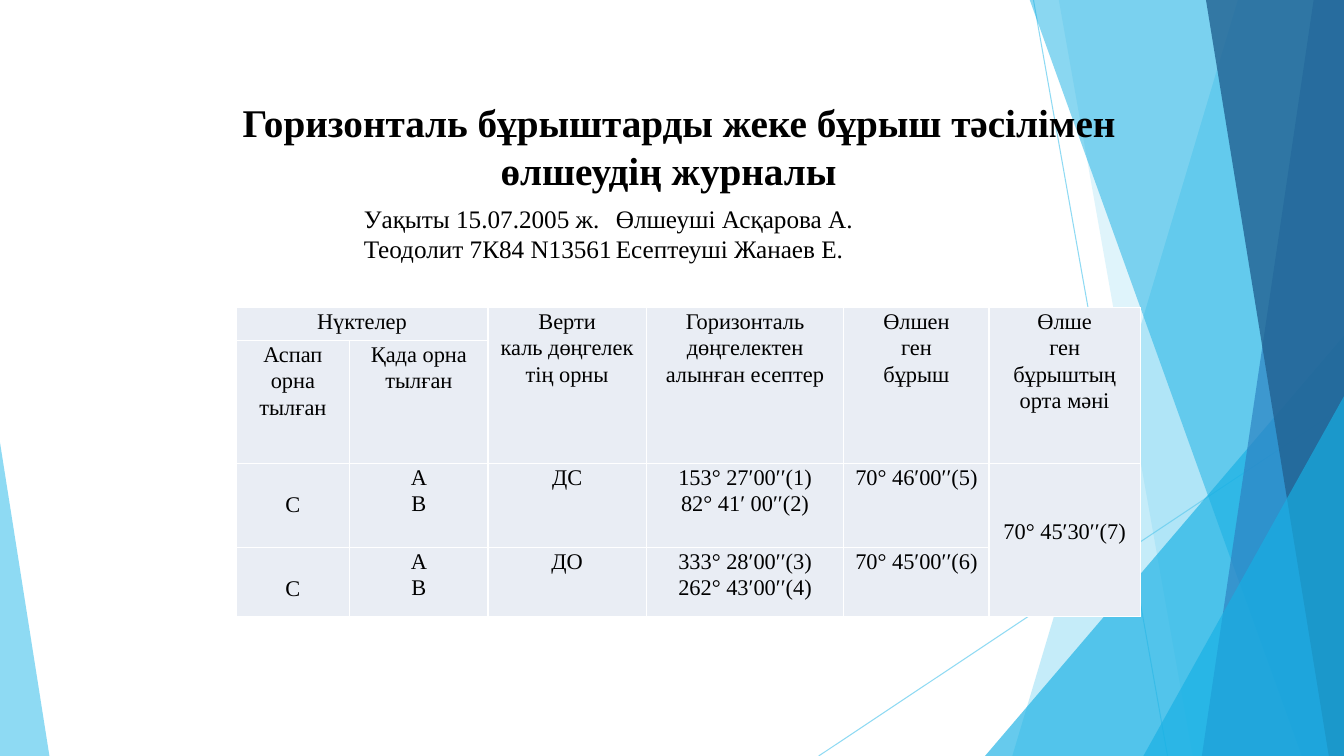
from lxml.etree import SubElement
from pptx import Presentation
from pptx.dml.color import RGBColor
from pptx.enum.shapes import MSO_CONNECTOR, MSO_SHAPE
from pptx.enum.text import MSO_ANCHOR, MSO_AUTO_SIZE, PP_ALIGN
from pptx.oxml.ns import qn
from pptx.util import Pt

PX = 9144


def paint(color_format, color, alpha=100):
    color_format.rgb = RGBColor.from_string(color)
    if alpha < 100:
        tint = color_format._xFill.find(qn("a:srgbClr"))
        SubElement(tint, qn("a:alpha"), val=str(alpha * 1000))


def style(paragraph, size, bold=False):
    for run in paragraph.runs:
        run.font.name = "Times New Roman"
        run.font.size = Pt(size)
        run.font.bold = bold
        paint(run.font.color, "000000")


prs = Presentation()
prs.slide_width = 1333 * PX
prs.slide_height = 750 * PX
slide = prs.slides.add_slide(prs.slide_layouts[5])
shapes = slide.shapes

for x1, y1, x2, y2 in [(1025, 0, 1158, 750), (1333, 403, 812, 750)]:
    ray = shapes.add_connector(MSO_CONNECTOR.STRAIGHT, x1 * PX, y1 * PX, x2 * PX, y2 * PX)
    ray.line.width = Pt(0.75)
    ray.line.fill.solid()
    paint(ray.line.fill.fore_color, "5FCBEF", 70)
    SubElement(ray._element.spPr, qn("a:effectLst"))

facets = [
    ("band", (1228, 1004), "5FCBEF", 36),
    ("band", (1050, 1183), "5FCBEF", 20),
    ("triangle", (977, 333, 356, 417, 1), "17B0E4", 66),
    ("band", (1021, 1291), "17B0E4", 50),
    ("band", (1303, 1192), "2E83C3", 70),
    ("band", (1196, 1318), "226292", 80),
    ("triangle", (1134, 393, 199, 357, 1), "17B0E4", 66),
    ("triangle", (0, 439, 49, 311, 0), "5FCBEF", 70),
]
for kind, geometry, color, alpha in facets:
    if kind == "band":
        top_x, bottom_x = geometry
        outline = shapes.build_freeform(top_x, -1, scale=PX)
        outline.add_line_segments([(1333, -1), (1333, 750), (bottom_x, 750)], close=True)
        facet = outline.convert_to_shape()
    else:
        *box, apex = geometry
        facet = shapes.add_shape(MSO_SHAPE.ISOSCELES_TRIANGLE, *[v * PX for v in box])
        facet.adjustments[0] = apex
    facet.shadow.inherit = False
    facet.line.fill.background()
    facet.fill.solid()
    paint(facet.fill.fore_color, color, alpha)

title = shapes.title
shapes._spTree.append(title._element)
title.left, title.top, title.width, title.height = 163 * PX, 93 * PX, 1000 * PX, 104 * PX
title.text_frame.text = "Горизонталь бұрыштарды жеке бұрыш тәсілімен өлшеудің журналы"
title.text_frame.word_wrap = True
title.text_frame.auto_size = MSO_AUTO_SIZE.NONE
title.text_frame.vertical_anchor = MSO_ANCHOR.TOP
heading = title.text_frame.paragraphs[0]
heading.alignment = PP_ALIGN.CENTER
heading.space_before = Pt(4)
heading._p.get_or_add_pPr().set("indent", str(21 * PX))
style(heading, 28, True)

columns = [113, 137, 157, 196, 144, 150]
rows = [33, 122, 83, 69]
journal = shapes.add_table(4, 6, 234 * PX, 305 * PX, sum(columns) * PX, sum(rows) * PX).table
journal.first_row = False
journal.horz_banding = False
for column, width in zip(journal.columns, columns):
    column.width = width * PX
for row, height in zip(journal.rows, rows):
    row.height = height * PX

entries = [
    ["Нүктелер", "", "Верти\nкаль дөңгелек\nтің орны", "Горизонталь дөңгелектен алынған есептер",
     "Өлшен\nген\nбұрыш", "Өлше\nген бұрыштың орта мәні"],
    ["Аспап орна\nтылған", "Қада орна\nтылған", "", "", "", ""],
    ["С", "А\nВ", "ДС", "153° 27′00′′(1)\n82° 41′ 00′′(2)", "70° 46′00′′(5)", "70° 45′30′′(7)"],
    ["С", "А\nВ", "ДО", "333° 28′00′′(3)\n262° 43′00′′(4)", "70° 45′00′′(6)", ""],
]
lowered = {(2, 0): 27, (3, 0): 27, (2, 5): 54}
for r, entry_row in enumerate(entries):
    for c, entry in enumerate(entry_row):
        cell = journal.cell(r, c)
        cell.margin_left = cell.margin_right = 7 * PX
        cell.margin_top = lowered.get((r, c), 0) * PX
        cell.margin_bottom = 0
        cell.text_frame.text = entry
        for paragraph in cell.text_frame.paragraphs:
            paragraph.alignment = PP_ALIGN.CENTER
            paragraph.line_spacing = 1.07
            style(paragraph, 16)
        for side in ("lnL", "lnR", "lnT", "lnB"):
            border = SubElement(cell._tc.get_or_add_tcPr(), qn("a:" + side), w="12700")
            SubElement(SubElement(border, qn("a:solidFill")), qn("a:srgbClr"), val="FFFFFF")
        cell.fill.solid()
        paint(cell.fill.fore_color, "E9EDF4")

for top, left, bottom, right in [(0, 0, 0, 1), (2, 5, 3, 5)] + [(0, c, 1, c) for c in range(2, 6)]:
    journal.cell(top, left).merge(journal.cell(bottom, right))

details = shapes.add_textbox(301 * PX, 197 * PX, 724 * PX, 71 * PX).text_frame
details.word_wrap = True
details.text = "Уақыты 15.07.2005 ж.\tӨлшеуші Асқарова А.\nТеодолит 7К84 N13561\tЕсептеуші Жанаев Е."
for paragraph in details.paragraphs:
    paragraph.alignment = PP_ALIGN.JUSTIFY
    paragraph._p.get_or_add_pPr().set("indent", str(50 * PX))
    style(paragraph, 18)

prs.save("out.pptx")
